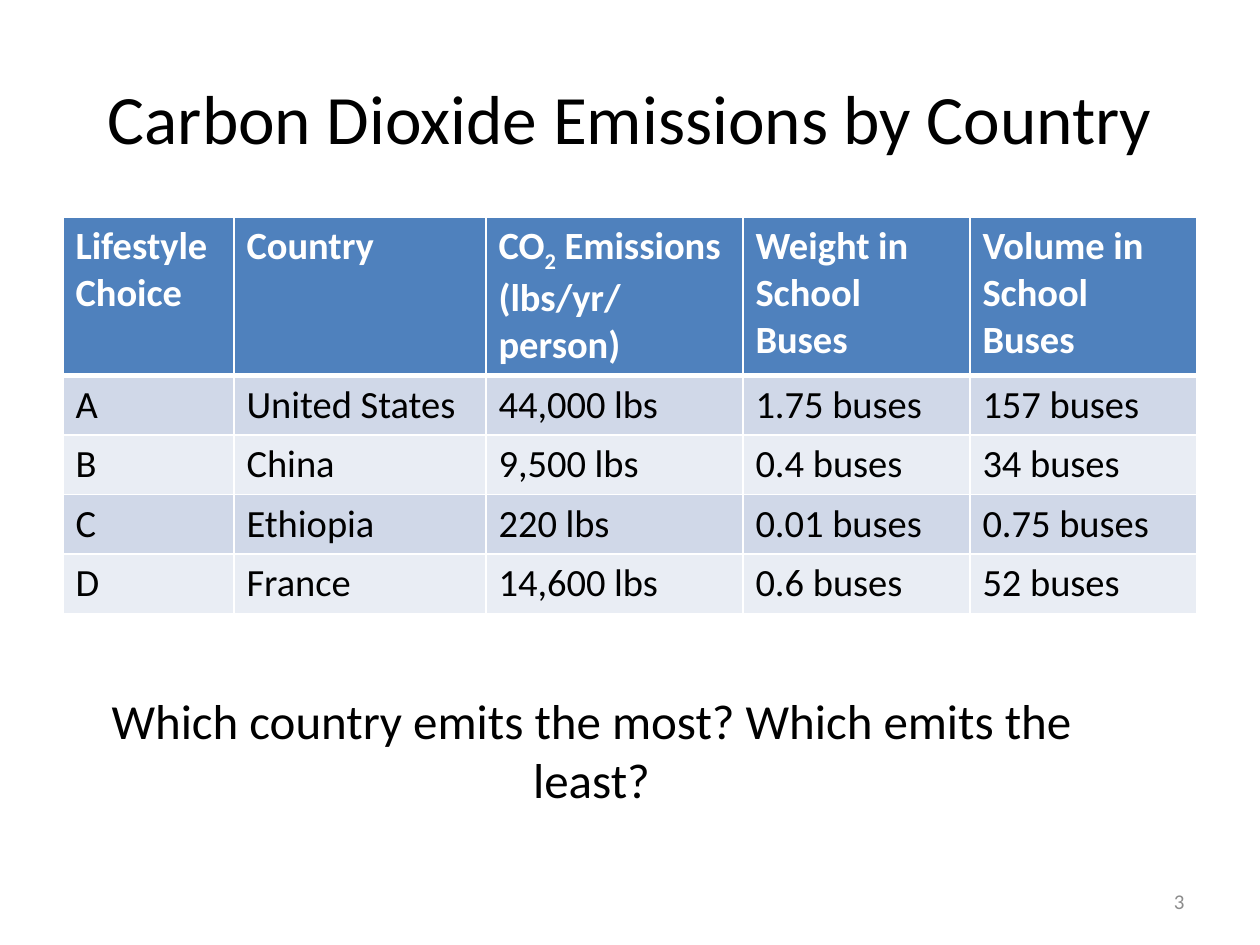
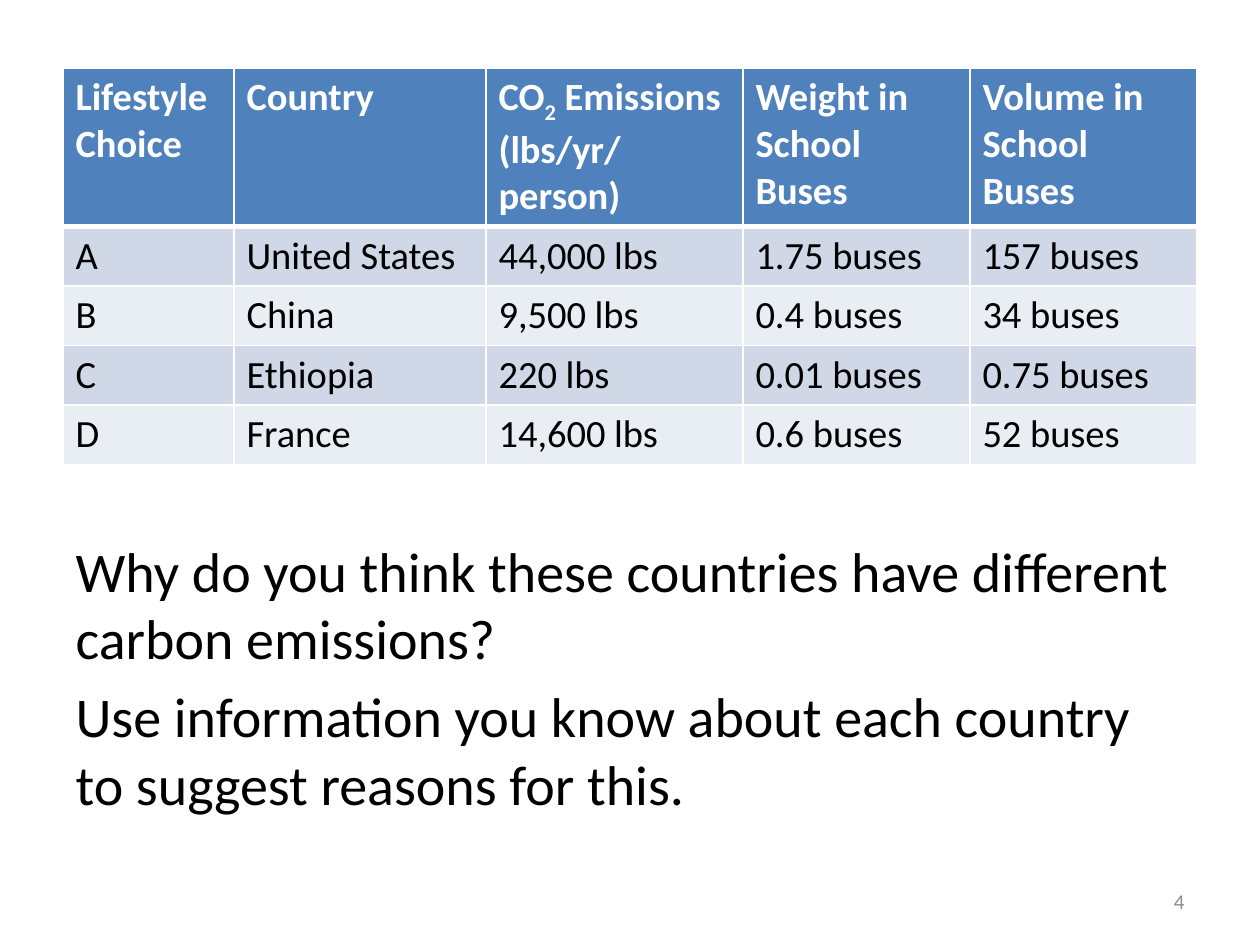
import pptx
import pptx.dml.color
import pptx.enum.text
import pptx.oxml
import pptx.oxml.ns
import pptx.util

EMU_PER_PX = 914400 / 126
FONT = "Calibri"
COLORS = {
    "text": "000000",
    "header_text": "FFFFFF",
    "header_fill": "4F81BD",
    "odd_row": "D0D8E8",
    "even_row": "E9EDF4",
    "border": "FFFFFF",
    "number": "8C8C8C",
}
ALIGN = pptx.enum.text.PP_ALIGN
ANCHOR = pptx.enum.text.MSO_ANCHOR

# A new line starts a paragraph; text between bars is subscript
HEADERS = [
    "Lifestyle Choice",
    "Country",
    "CO|2| Emissions\n(lbs/yr/person)",
    "Weight in School Buses",
    "Volume in School Buses",
]
EMISSIONS = [
    ["A", "United States", "44,000 lbs", "1.75 buses", "157 buses"],
    ["B", "China", "9,500 lbs", "0.4 buses", "34 buses"],
    ["C", "Ethiopia", "220 lbs", "0.01 buses", "0.75 buses"],
    ["D", "France", "14,600 lbs", "0.6 buses", "52 buses"],
]
COLUMN_WIDTHS = [171, 252, 257, 227, 227]
HEADER_HEIGHT, ROW_HEIGHT = 157, 59
LEFT, CONTENT_WIDTH = 63, 1134


def px(length):
    return pptx.util.Emu(round(length * EMU_PER_PX))


def rgb(name):
    return pptx.dml.color.RGBColor.from_string(COLORS[name])


def write_text(frame, text, size, color="text", bold=False, align=None):
    """Fill a text frame, one paragraph a line, run by run."""
    frame.word_wrap = True
    for index, line in enumerate(text.split("\n")):
        para = frame.paragraphs[0] if index == 0 else frame.add_paragraph()
        para.alignment = align
        for part, piece in enumerate(line.split("|")):
            span = para.add_run()
            span.text = piece
            span.font.name = FONT
            span.font.size = pptx.util.Pt(size)
            span.font.bold = bold
            span.font.color.rgb = rgb(color)
            if part % 2:
                span.font._element.set("baseline", "-25000")


def place(shape, left, top, width, height):
    shape.left, shape.top = px(left), px(top)
    shape.width, shape.height = px(width), px(height)


def fill_placeholder(shape, bounds, text, size, anchor, align):
    place(shape, *bounds)
    frame = shape.text_frame
    frame.auto_size = pptx.enum.text.MSO_AUTO_SIZE.NONE
    frame.vertical_anchor = anchor
    write_text(frame, text, size, align=align)


def add_title(page, text):
    fill_placeholder(page.shapes.title, (LEFT, 38, CONTENT_WIDTH, 157),
                     text, 39.6, ANCHOR.MIDDLE, ALIGN.CENTER)


def add_body(page, bounds, text):
    body = page.placeholders[1]
    fill_placeholder(body, bounds, text, 32, ANCHOR.TOP, ALIGN.LEFT)
    # Plain paragraphs: no bullet, no hanging indent
    for para in body.text_frame.paragraphs:
        properties = para._p.get_or_add_pPr()
        properties.set("marL", "0")
        properties.set("indent", "0")
        properties.append(pptx.oxml.parse_xml(
            f'<a:buNone {pptx.oxml.ns.nsdecls("a")}/>'))


def add_text(page, bounds, text, size, color="text", align=ALIGN.LEFT,
             anchor=ANCHOR.TOP):
    box = page.shapes.add_textbox(*map(px, bounds))
    box.text_frame.vertical_anchor = anchor
    write_text(box.text_frame, text, size, color, align=align)


def add_page_number(page, number):
    add_text(page, (903, 876, 294, 50), str(number), 12, "number",
             ALIGN.RIGHT, ANCHOR.MIDDLE)


def set_borders(cell, top, bottom):
    """Draw the cell's four edges; top and bottom are widths in points."""
    properties = cell._tc.get_or_add_tcPr()
    edges = {"lnL": 1, "lnR": 1, "lnT": top, "lnB": bottom}
    for index, (edge, width) in enumerate(edges.items()):
        properties.insert(index, pptx.oxml.parse_xml(
            f'<a:{edge} {pptx.oxml.ns.nsdecls("a")} w="{width * 12700}">'
            f'<a:solidFill><a:srgbClr val="{COLORS["border"]}"/></a:solidFill>'
            f'</a:{edge}>'))


def add_emissions_table(page, top):
    rows = [HEADERS] + EMISSIONS
    height = HEADER_HEIGHT + ROW_HEIGHT * len(EMISSIONS)
    table = page.shapes.add_table(
        len(rows), len(HEADERS), px(LEFT), px(top),
        px(CONTENT_WIDTH), px(height)).table
    for column, width in zip(table.columns, COLUMN_WIDTHS):
        column.width = px(width)
    for index, values in enumerate(rows):
        header = index == 0
        table.rows[index].height = px(HEADER_HEIGHT if header else ROW_HEIGHT)
        fill = "header_fill" if header else "odd_row" if index % 2 else "even_row"
        for cell, value in zip(table.rows[index].cells, values):
            cell.fill.solid()
            cell.fill.fore_color.rgb = rgb(fill)
            write_text(cell.text_frame, value, 22,
                       "header_text" if header else "text", header)
            # A thick line parts the header from the countries
            set_borders(cell, 3 if index == 1 else 1, 3 if header else 1)


def main():
    deck = pptx.Presentation()
    deck.slide_width, deck.slide_height = px(1260), px(945)

    # Emissions by country
    page = deck.slides.add_slide(deck.slide_layouts[5])
    add_title(page, "Carbon Dioxide Emissions by Country")
    add_emissions_table(page, 217)
    add_page_number(page, 3)
    add_text(page, (LEFT, 684, 1057, 131),
             "Which country emits the most? Which emits the least?",
             28, align=ALIGN.CENTER)

    # Discussion of the differences
    page = deck.slides.add_slide(deck.slide_layouts[1])
    title = page.shapes.title._element
    title.getparent().remove(title)
    add_body(page, (LEFT, 530, CONTENT_WIDTH, 370),
             "Why do you think these countries have different carbon emissions?\n"
             "Use information you know about each country to suggest reasons for this.")
    add_emissions_table(page, 68)
    add_page_number(page, 4)

    deck.save("out.pptx")


if __name__ == "__main__":
    main()
